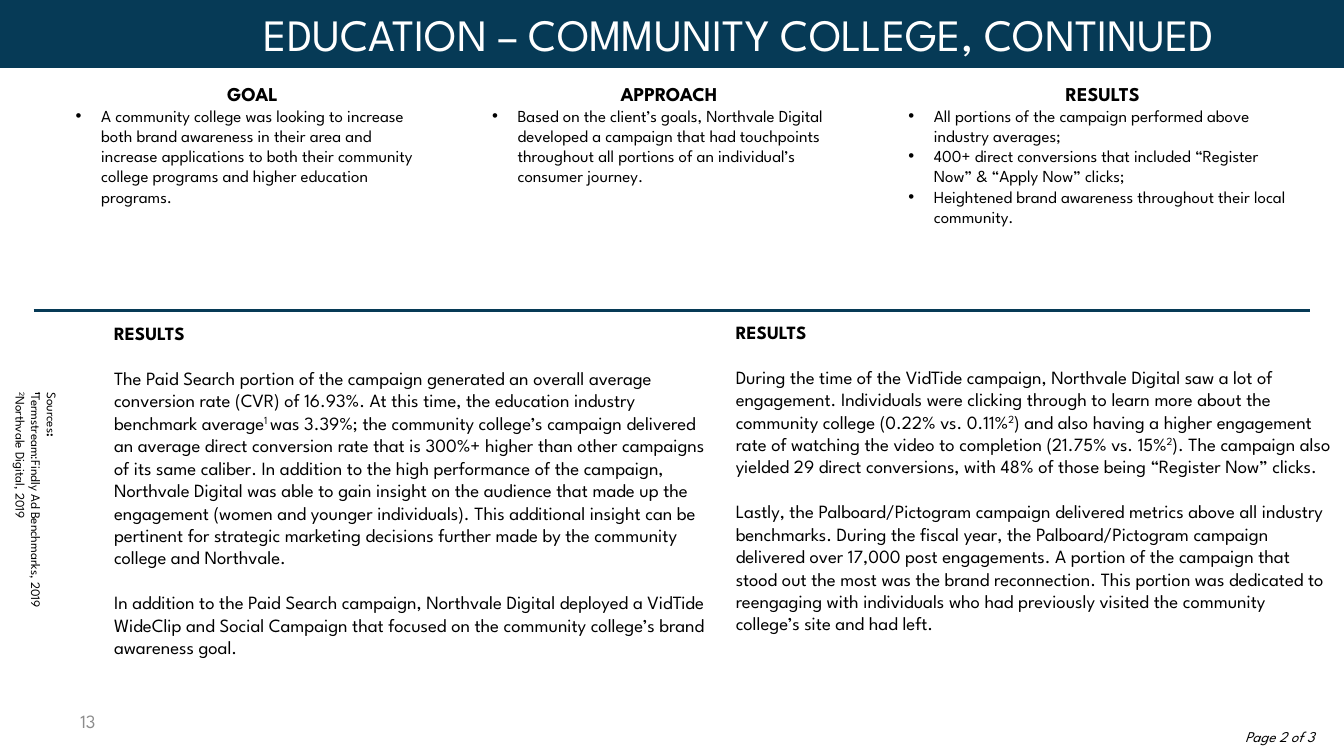
import pptx
import pptx.util
import pptx.dml.color
import pptx.enum.shapes
import pptx.enum.text
import pptx.oxml.ns
import lxml.etree

Pt = pptx.util.Pt
ALIGN = pptx.enum.text.PP_ALIGN
ANCHOR = pptx.enum.text.MSO_ANCHOR
FIT = pptx.enum.text.MSO_AUTO_SIZE
FACE = "League Spartan"
HUES = {"navy": "063A56", "ink": "000000", "gray": "8C8C8C", "white": "FFFFFF"}
COLS, ROWS = 100, 56.25
CELL = pptx.util.Inches(0.1)

GOALS = [
    ("GOAL", (4.65, 5.6, 28.3, 12.2), [
        "A community college was looking to increase both brand awareness in their area and "
        "increase applications to both their community college programs and higher education programs."]),
    ("APPROACH", (35.63, 5.6, 28.3, 8.8), [
        "Based on the client’s goals, Northvale Digital developed a campaign that had touchpoints "
        "throughout all portions of an individual’s consumer journey."]),
    ("RESULTS", (66.6, 5.6, 30.9, 11.9), [
        "All portions of the campaign performed above industry averages;",
        "400+ direct conversions that included “Register Now” & “Apply Now” clicks;",
        "Heightened brand awareness throughout their local community."]),
]
STORY = [
    ((7.5, 23.47, 46.2, 29.6), [
        "The Paid Search portion of the campaign generated an overall average conversion rate (CVR) "
        "of 16.93%. At this time, the education industry benchmark average^1 ^was 3.39%; the community "
        "college’s campaign delivered an average direct conversion rate that is 300%+ higher than other "
        "campaigns of its same caliber. In addition to the high performance of the campaign, Northvale "
        "Digital was able to gain insight on the audience that made up the engagement (women and younger "
        "individuals). This additional insight can be pertinent for strategic marketing decisions further "
        "made by the community college and Northvale.",
        "In addition to the Paid Search campaign, Northvale Digital deployed a VidTide WideClip and "
        "Social Campaign that focused on the community college’s brand awareness goal."]),
    ((53.76, 23.37, 46.2, 31.5), [
        "During the time of the VidTide campaign, Northvale Digital saw a lot of engagement. Individuals "
        "were clicking through to learn more about the community college (0.22% vs. 0.11%^2^) and also "
        "having a higher engagement rate of watching the video to completion (21.75% vs. 15%^2^). The "
        "campaign also yielded 29 direct conversions, with 48% of those being “Register Now” clicks.",
        "Lastly, the Palboard/Pictogram campaign delivered metrics above all industry benchmarks. During "
        "the fiscal year, the Palboard/Pictogram campaign delivered over 17,000 post engagements. A "
        "portion of the campaign that stood out the most was the brand reconnection. This portion was "
        "dedicated to reengaging with individuals who had previously visited the community college’s site "
        "and had left."]),
]


def tint(hue):
    return pptx.dml.color.RGBColor.from_string(HUES[hue])


def grid(*cells):
    return [round(n * CELL) for n in cells]


def frame(slide, box, wrap=True):
    shape = slide.shapes.add_textbox(*grid(*box))
    shape.text_frame.word_wrap = wrap
    shape.text_frame.auto_size = FIT.SHAPE_TO_FIT_TEXT
    return shape


def write(shape, text, size, hue="ink", bold=False, align=ALIGN.LEFT, gap=0):
    body = shape.text_frame
    par = body.add_paragraph() if body.text else body.paragraphs[0]
    par.alignment = align
    par.space_before = Pt(gap)
    font = par.font
    font.name, font.size, font.bold = FACE, Pt(size), bold
    font.color.rgb = tint(hue)
    for turn, part in enumerate(text.split("^")):
        if part:
            run = par.add_run()
            run.text = part
            if turn % 2:
                run.font._element.set("baseline", "30000")
    return par


def indent(par, left, first=0):
    props = par._p.get_or_add_pPr()
    props.set("marL", str(pptx.util.Inches(left)))
    props.set("indent", str(pptx.util.Inches(first)))
    return props


def bullet(par):
    props = indent(par, 0.19, -0.19)
    last = props.find(pptx.oxml.ns.qn("a:defRPr"))
    for tag, name, value in (("a:buFont", "typeface", "Arial"), ("a:buChar", "char", "•")):
        mark = lxml.etree.Element(pptx.oxml.ns.qn(tag))
        mark.set(name, value)
        last.addprevious(mark)


def banner(slide, box, text):
    band = slide.shapes.add_shape(pptx.enum.shapes.MSO_SHAPE.RECTANGLE, *grid(*box))
    band.shadow.inherit = False
    band.fill.solid()
    band.fill.fore_color.rgb = tint("navy")
    band.line.fill.background()
    band.text_frame.word_wrap = True
    band.text_frame.vertical_anchor = ANCHOR.TOP
    indent(write(band, text, 24, "white", align=ALIGN.CENTER), 1)


def rule(slide, box):
    left, top, wide, high = grid(*box)
    line = slide.shapes.add_connector(
        pptx.enum.shapes.MSO_CONNECTOR.STRAIGHT, left, top, left + wide, top + high)
    line.line.color.rgb = tint("navy")
    line.line.width = Pt(1.5)
    lxml.etree.SubElement(line._element.spPr, pptx.oxml.ns.qn("a:effectLst"))


def brief(slide, box, head, points):
    shape = frame(slide, box)
    write(shape, head, 10.5, bold=True, align=ALIGN.CENTER)
    for point in points:
        bullet(write(shape, point, 9))


def story(slide, box, paras):
    shape = frame(slide, box)
    write(shape, "RESULTS", 10, bold=True)
    for para in paras:
        write(shape, para, 10, gap=12)


def source(slide, box):
    shape = frame(slide, box, wrap=False)
    shape.rotation = 90
    colon = write(shape, "Sources", 7).add_run()
    colon.text = ":"
    first = write(shape, "^1^Termstream:Findly Ad Benchmarks, 2019", 7)
    for run in (colon, first.runs[0]):
        run.font.bold = True
    write(shape, "^2^Northvale Digital, 2019", 7)


def footer(slide, left, right):
    count = frame(slide, left)
    count.text_frame.auto_size = FIT.NONE
    count.text_frame.vertical_anchor = ANCHOR.MIDDLE
    write(count, "13", 10, "gray")
    write(frame(slide, right), "Page 2 of 3", 8).font.italic = True


def main():
    deck = pptx.Presentation()
    deck.slide_width, deck.slide_height = grid(COLS, ROWS)
    slide = deck.slides.add_slide(deck.slide_layouts[6])
    banner(slide, (0, 0, COLS, 5.05), "EDUCATION – COMMUNITY COLLEGE, CONTINUED")
    rule(slide, (2.5, 23.1, COLS - 5, 0))
    for head, box, points in GOALS:
        brief(slide, box, head, points)
    for box, paras in STORY:
        story(slide, box, paras)
    source(slide, (-8.6, 37.25, 22.6, 4.5))
    footer(slide, (5, 52.14, 23.3, 3), (91.67, 53.64, 8.3, 2.4))
    deck.save("out.pptx")


if __name__ == "__main__":
    main()
